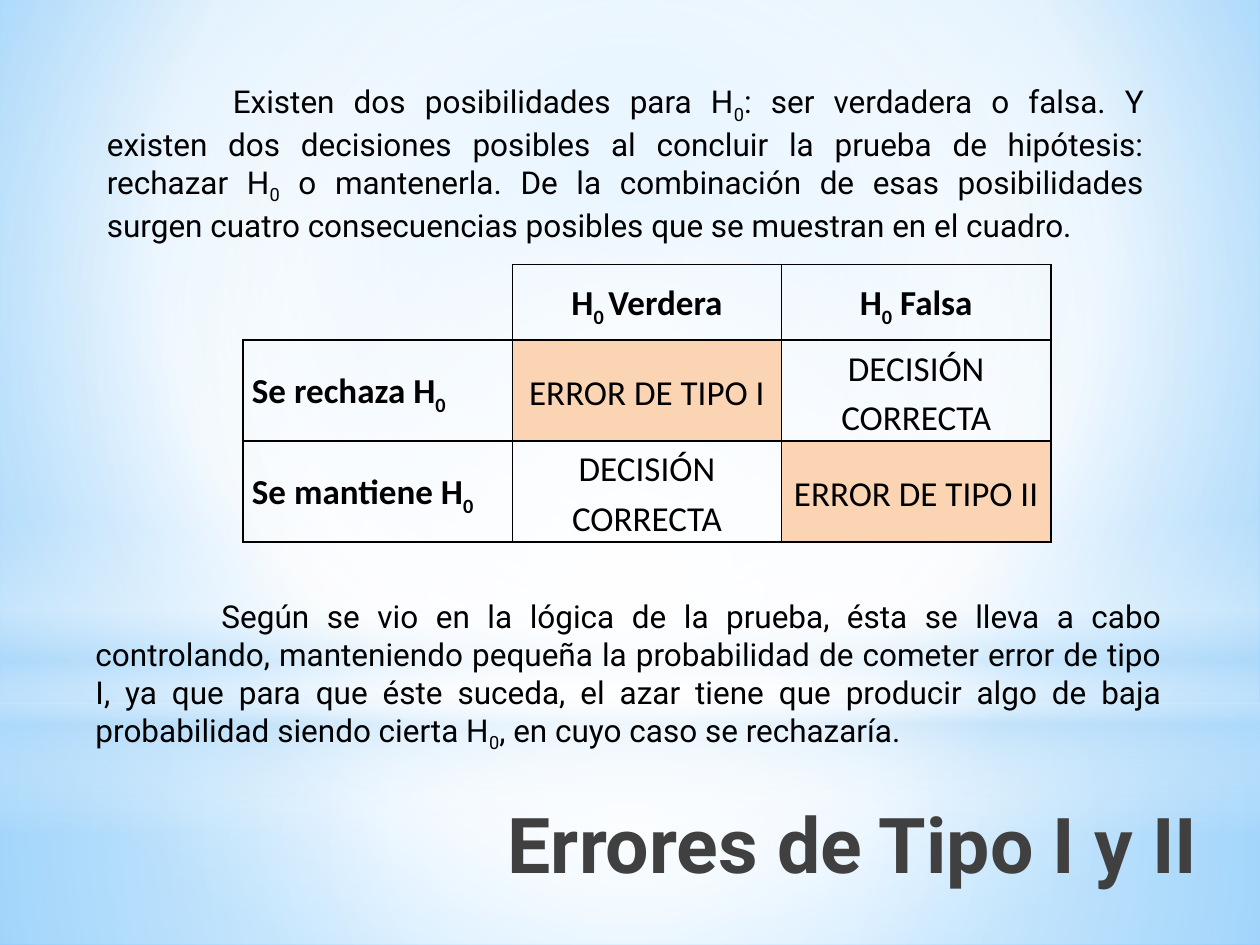
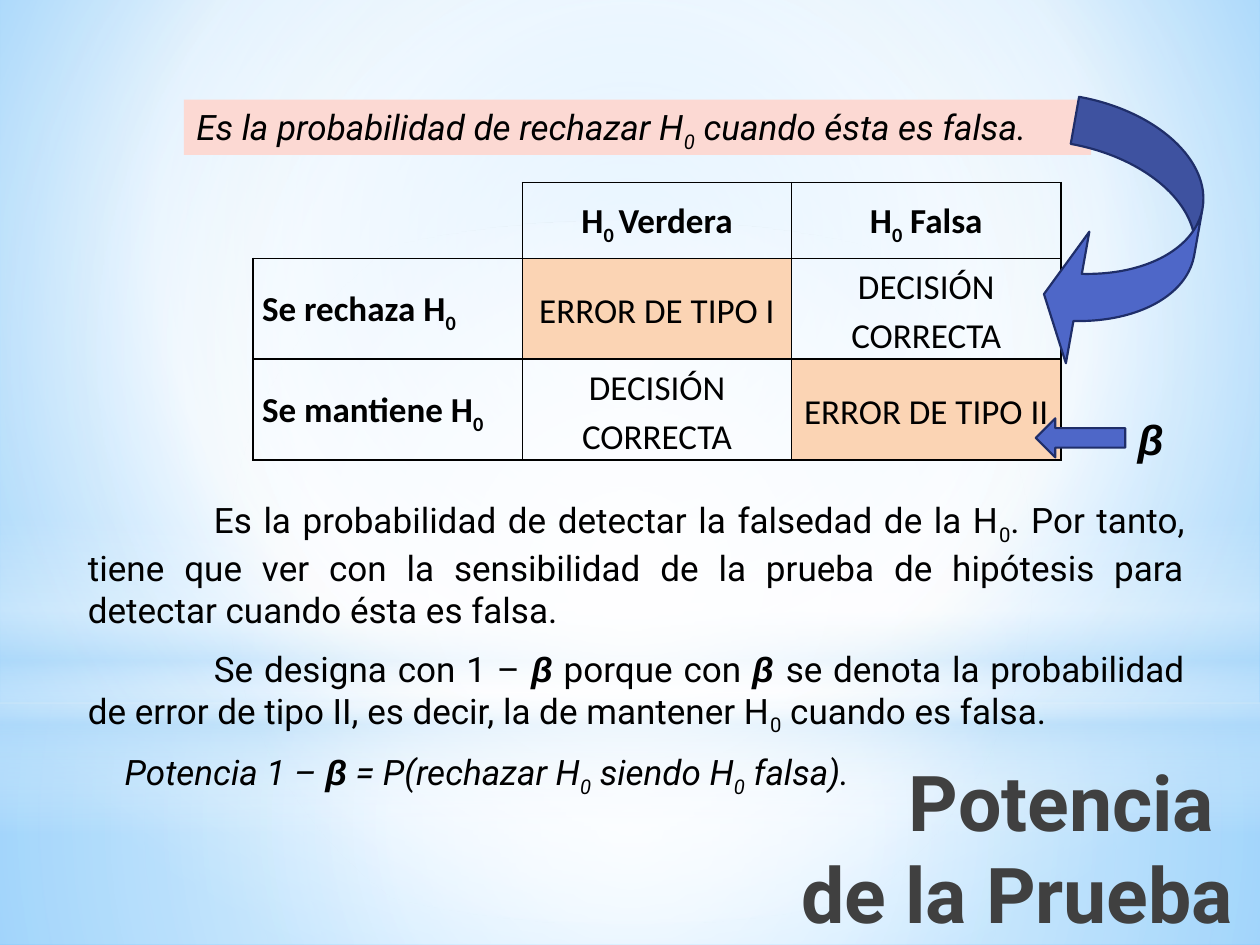
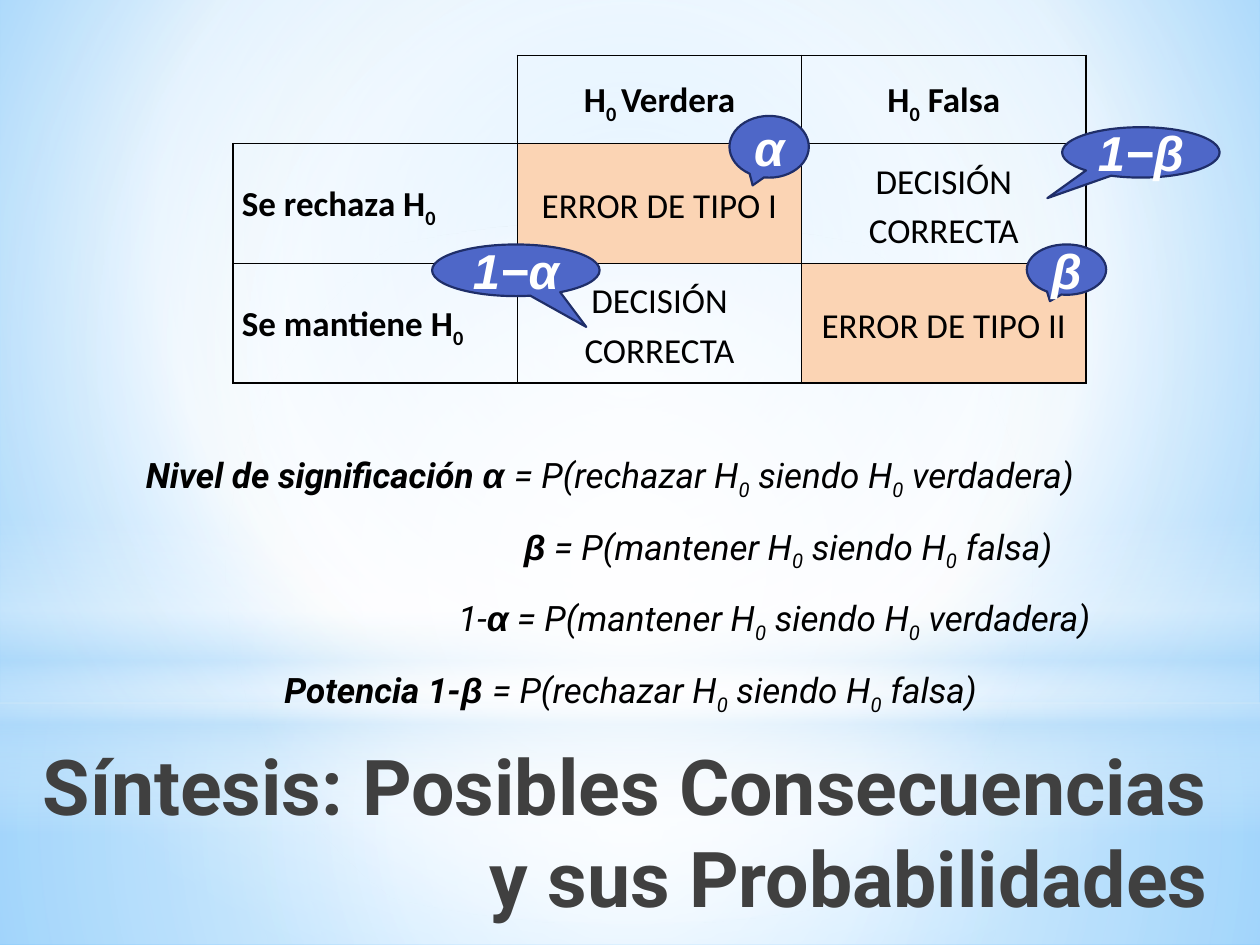
"""Build three slides on type I and II errors and the power of a test."""
from lxml.etree import SubElement as Sub
from pptx import Presentation
from pptx.dml.color import RGBColor
from pptx.enum.shapes import MSO_SHAPE as Kind
from pptx.enum.text import MSO_ANCHOR as Anchor, PP_ALIGN as Align
from pptx.oxml import parse_xml as make
from pptx.oxml.ns import qn
from pptx.util import Inches, Pt

BLACK = RGBColor(0, 0, 0)
WHITE = RGBColor(255, 255, 255)
GRAY = RGBColor(0x40, 0x40, 0x40)
PEACH = RGBColor(0xFB, 0xD4, 0xB4)
PINK = RGBColor(0xFC, 0xD9, 0xD3)
BLUE = RGBColor(0x4E, 0x67, 0xC8)
NAVY = RGBColor(0x1F, 0x2E, 0x69)
SKY = RGBColor(0xB4, 0xDC, 0xFA)
PALE = RGBColor(0x9E, 0xD5, 0xFF)
DEEP = RGBColor(0x5B, 0xB9, 0xFF)
NS = "http://schemas.openxmlformats.org/drawingml/2006/main"


def write(frame, text, font="Roboto", size=20, color=BLACK, bold=False, italic=False,
          align=Align.LEFT, anchor=Anchor.TOP, lead=None, indents=(0,), gap=0):
    """Write lines of runs split by |, led by _ (subscript), * (Greek) or + (bold)."""
    frame.word_wrap = True
    frame.vertical_anchor = anchor
    for i, line in enumerate(text.split("\n")):
        par = frame.add_paragraph() if i else frame.paragraphs[0]
        par.alignment, par.line_spacing = align, lead
        par.space_before = Pt(gap if i else 0)
        props = par._p.get_or_add_pPr()
        props.set("marL", "0")
        props.set("indent", str(Inches(indents[i % len(indents)])))
        for part in line.split("|"):
            mark = part[0] if part[0] in "_*+" else ""
            run = par.add_run()
            run.text = part[len(mark):]
            style = run.font
            style.name = "Arial" if mark == "*" else font
            style.size, style.color.rgb = Pt(size), color
            style.bold = bold or mark in ("*", "+")
            style.italic = italic or mark == "*"
            if mark == "_":
                run._r.get_or_add_rPr().set("baseline", "-25000")


def paint(node, stops, focus=None):
    """Replace the solid fill in a node by a circular or vertical gradient."""
    grad = make(f'<a:gradFill xmlns:a="{NS}" rotWithShape="1"><a:gsLst/></a:gradFill>')
    for at, color, alpha in stops:
        stop = Sub(grad[0], qn("a:gs"), pos=str(at * 1000))
        tint = Sub(stop, qn("a:srgbClr"), val=str(color))
        Sub(tint, qn("a:alpha"), val=str(alpha * 1000))
    if focus:
        ring = Sub(grad, qn("a:path"), path="circle")
        Sub(ring, qn("a:fillToRect"), {k: str(v * 1000) for k, v in zip("ltrb", focus)})
    else:
        Sub(grad, qn("a:lin"), ang="5400000", scaled="0")
    old = node.find(".//" + qn("a:solidFill"))
    old.getparent().replace(old, grad)


prs = Presentation()
prs.slide_width, prs.slide_height = Inches(10), Inches(7.5)
blank = prs.slide_layouts[6]
for hold in list(blank.placeholders):
    blank.shapes.element.remove(hold.element)
blank.background.fill.solid()
paint(blank.background.element, [(0, PALE, 100), (60, WHITE, 100), (100, DEEP, 100)],
      (20, 10, 20, 60))
one, two, three = slides = [prs.slides.add_slide(blank) for _ in range(3)]

mid = (50, 50, 50, 50)
bands = [
    (Kind.RECTANGLE, 5.58, 1.92, [(0, WHITE, 91), (37, WHITE, 76), (100, SKY, 79)], mid),
    (Kind.RECTANGLE, 0, 5.58, [(0, WHITE, 89), (48, WHITE, 62), (100, SKY, 79)], mid),
    (Kind.RECTANGLE, 4.12, 2.5, [(0, WHITE, 0), (29, WHITE, 30), (45, SKY, 40),
                                 (55, WHITE, 26), (65, SKY, 60), (100, WHITE, 0)], None),
    (Kind.OVAL, 1.75, 5.58, [(0, WHITE, 100), (56, WHITE, 0)], mid),
]
for kind, top, high, stops, focus in bands:
    band = one.shapes.add_shape(kind, 0, Inches(top), Inches(10), Inches(high))
    band.shadow.inherit = False
    band.line.fill.background()
    band.fill.solid()
    paint(band.element, stops, focus)
for band in list(one.shapes):
    blank.shapes.element.append(band.element)

titles = [
    ("Errores de Tipo I y II", (0.66, 6.27, 8.95, 0.87)),
    ("Potencia \nde la Prueba", (3.32, 5.94, 6.57, 0.87)),
    ("Síntesis: Posibles Consecuencias y sus Probabilidades", (0.12, 5.81, 9.57, 1.41)),
]
grids = [
    (1.93, 2.1, 6.41, (0.6, 0.8, 0.8)),
    (2.01, 1.45, 6.41, (0.6, 0.8, 0.8)),
    (1.85, 0.44, 6.77, (0.7, 0.95, 0.95)),
]
cells = [
    ["", "H|_0 |Verdera", "H|_0| Falsa"],
    ["Se rechaza H|_0", "ERROR DE TIPO I", "DECISIÓN CORRECTA"],
    ["Se mantiene H|_0", "DECISIÓN CORRECTA", "ERROR DE TIPO II"],
]
for slide, (title, place), (left, top, wide, rows) in zip(slides, titles, grids):
    box = slide.shapes.add_textbox(*map(Inches, place))
    write(box.text_frame, title, size=44, color=GRAY, bold=True, align=Align.RIGHT)
    grid = slide.shapes.add_table(
        3, 3, *map(Inches, (left, top, wide, sum(rows)))).table
    grid.first_row = grid.horz_banding = False
    for r, line in enumerate(cells):
        grid.rows[r].height = Inches(rows[r])
        for c, text in enumerate(line):
            cell = grid.cell(r, c)
            props = cell._tc.get_or_add_tcPr()
            for side in "LRTB":
                edge = Sub(props, qn("a:ln" + side), w=str(Pt(1)))
                if text or side in "RB":
                    Sub(Sub(edge, qn("a:solidFill")), qn("a:srgbClr"), val=str(BLACK))
                else:
                    Sub(edge, qn("a:noFill"))
            if text.startswith("ERROR"):
                cell.fill.solid()
                cell.fill.fore_color.rgb = PEACH
            else:
                cell.fill.background()
            if text:
                cell.margin_left = cell.margin_right = Inches(0.07)
                cell.margin_top = cell.margin_bottom = 0
                cell.vertical_anchor = Anchor.MIDDLE
                write(cell.text_frame, text, font="Calibri", bold=r * c == 0, lead=1.15,
                      align=Align.CENTER if c else Align.LEFT, anchor=Anchor.MIDDLE)

arrow = (Kind.RIGHT_ARROW, 180, False, ())
curve = (Kind.CURVED_DOWN_ARROW, 280.1, True, (0.339, 1.007, 0.239))
bubble = Kind.OVAL_CALLOUT
marks = [
    (two, (7.87, 1.35, 2.12, 1.12), curve, ""),
    (two, (8.22, 3.32, 0.71, 0.31), arrow, ""),
    (three, (5.79, 0.92, 0.63, 0.49), (bubble, 0, False, ()), "α"),
    (three, (8.15, 1.94, 0.63, 0.4), (bubble, 0, False, ()), "β"),
    (three, (8.43, 1.01, 1.25, 0.4), (bubble, 0, False, (-0.594, 0.908)), "1−β"),
    (three, (3.43, 1.94, 1.33, 0.41), (bubble, 0, False, (0.42, 1.097)), "1−α"),
]
strip = two.shapes.add_shape(Kind.RECTANGLE, *map(Inches, (1.46, 0.79, 7.2, 0.44)))
strip.shadow.inherit = False
strip.line.fill.background()
strip.fill.solid()
strip.fill.fore_color.rgb = PINK
write(strip.text_frame, "Es la probabilidad de rechazar H|_0| cuando ésta es falsa.",
      italic=True)
for slide, place, (kind, turn, flip, bends), text in marks:
    mark = slide.shapes.add_shape(kind, *map(Inches, place))
    mark.shadow.inherit = False
    mark.fill.solid()
    mark.fill.fore_color.rgb = BLUE
    mark.line.color.rgb, mark.line.width = NAVY, Pt(1.25)
    mark.rotation = turn
    for i, bend in enumerate(bends):
        mark.adjustments[i] = bend
    if flip:
        frame = mark.element.spPr.find(qn("a:xfrm"))
        frame.set("flipH", "1")
        frame.set("flipV", "1")
    if text:
        mark.text_frame.margin_left = mark.text_frame.margin_right = 0
        write(mark.text_frame, text, font="Arial", size=28, color=WHITE, bold=True,
              italic=True, align=Align.CENTER, anchor=Anchor.MIDDLE)

prose = dict(align=Align.JUSTIFY, indents=(1,))
notes = [
    (one, (0.75, 0.6, 8.43, 1.31),
     "Existen dos posibilidades para H|_0|: ser verdadera o falsa. Y existen dos "
     "decisiones posibles al concluir la prueba de hipótesis: rechazar H|_0| o "
     "mantenerla. De la combinación de esas posibilidades surgen cuatro consecuencias "
     "posibles que se muestran en el cuadro.", dict(prose, size=18)),
    (one, (0.66, 4.69, 8.66, 1.31),
     "Según se vio en la lógica de la prueba, ésta se lleva a cabo controlando, "
     "manteniendo pequeña la probabilidad de cometer error de tipo I, ya que para que "
     "éste suceda, el azar tiene que producir algo de baja probabilidad siendo cierta "
     "H|_0|, en cuyo caso se rechazaría.", dict(prose, size=18)),
    (two, (0.6, 3.91, 8.9, 2.05),
     "Es la probabilidad de detectar la falsedad de la H|_0|. Por tanto, tiene que ver "
     "con la sensibilidad de la prueba de hipótesis para detectar cuando ésta es falsa.\n"
     "Se designa con 1 – |*β| porque con |*β |se denota la probabilidad de error de "
     "tipo II, es decir, la de mantener H|_0| cuando es falsa.", dict(prose, gap=9.4)),
    (two, (8.93, 3.23, 0.39, 0.5), "*β", dict(size=24)),
    (two, (0.75, 5.91, 6.23, 0.44),
     "Potencia 1 – |*β| = P(rechazar H|_0| siendo H|_0| falsa).",
     dict(italic=True, align=Align.CENTER)),
    (three, (1.06, 3.36, 8.43, 2.12),
     "+Nivel de significación |*α |= P(rechazar H|_0| siendo H|_0| verdadera)\n"
     "*β| = P(mantener H|_0| siendo H|_0| falsa)\n"
     "1-|*α| = P(mantener H|_0| siendo H|_0| verdadera)\n"
     "+Potencia 1-|*β |= P(rechazar H|_0| siendo H|_0| falsa)",
     dict(italic=True, lead=1.5, indents=(0, 3, 2.48, 1.1))),
]
for slide, place, text, look in notes:
    box = slide.shapes.add_textbox(*map(Inches, place))
    write(box.text_frame, text, **look)

prs.save("out.pptx")
